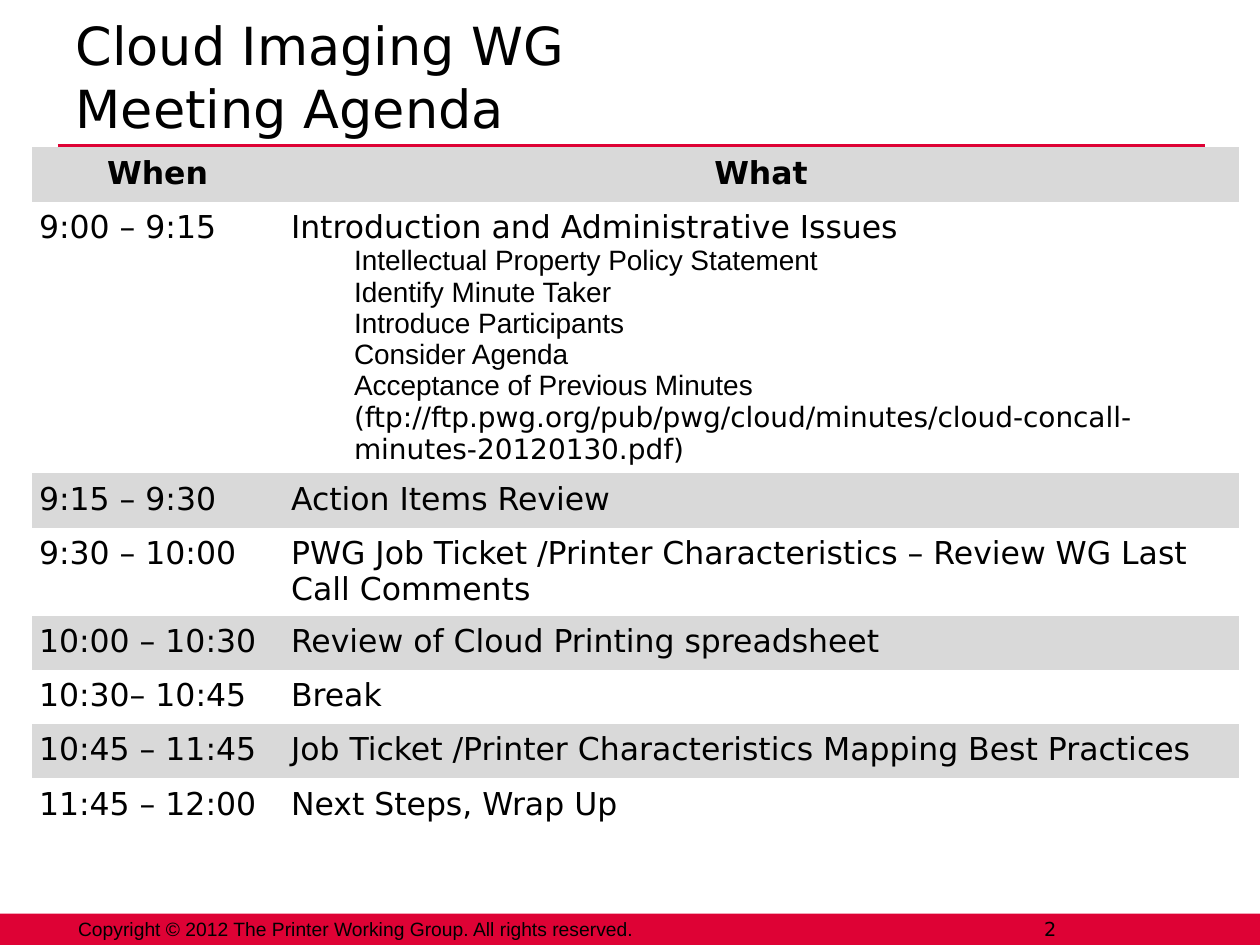
from lxml import etree
from pptx import Presentation
from pptx.dml.color import RGBColor
from pptx.enum.shapes import MSO_CONNECTOR as Conn, MSO_SHAPE as Shape
from pptx.enum.text import MSO_ANCHOR as Anchor, MSO_AUTO_SIZE as Fit, PP_ALIGN as Align
from pptx.oxml.ns import qn
from pptx.util import Inches, Pt

HUES = {"red": "DE0235", "grey": "D9D9D9", "ink": "000000"}
SANS, ARIAL = "DejaVu Sans", "Arial"
PLAIN = "{2D5ABB26-0587-4C30-8999-92F81FD0307C}"
TITLE = ["Cloud Imaging WG", "Meeting Agenda"]
NOTICE = "Copyright © 2012 The Printer Working Group. All rights reserved."
HEAD = ("When", "What")
AGENDA = [
    ("9:00 – 9:15", "Introduction and Administrative Issues"),
    ("9:15 – 9:30", "Action Items Review"),
    ("9:30 – 10:00", "PWG Job Ticket /Printer Characteristics – Review WG Last Call Comments"),
    ("10:00 – 10:30", "Review of Cloud Printing spreadsheet"),
    ("10:30– 10:45", "Break"),
    ("10:45 – 11:45", "Job Ticket /Printer Characteristics Mapping Best Practices"),
    ("11:45 – 12:00", "Next Steps, Wrap Up"),
]
TOPICS = [
    ("Intellectual Property Policy Statement", ARIAL),
    ("Identify Minute Taker", ARIAL),
    ("Introduce Participants", ARIAL),
    ("Consider Agenda", ARIAL),
    ("Acceptance of Previous Minutes", ARIAL),
    ("(ftp://ftp.pwg.org/pub/pwg/cloud/minutes/cloud-concall-minutes-20120130.pdf)", SANS),
]


def hue(name):
    return RGBColor.from_string(HUES[name])


def add_run(para, text, size, face=SANS, bold=False):
    run = para.add_run()
    run.text = text
    font = run.font
    font.size, font.name, font.bold = Pt(size), face, bold
    font.color.rgb = hue("ink")


def indent(para, left):
    props = para._p.get_or_add_pPr()
    props.set("marL", str(Inches(left)))
    props.set("indent", "0")


def set_frame(frame, pads, anchor, wrap=True):
    frame.margin_left, frame.margin_top, frame.margin_right, frame.margin_bottom = map(Inches, pads)
    frame.vertical_anchor = anchor
    frame.word_wrap = wrap
    frame.auto_size = Fit.NONE


def add_title(slide, left, top, width, height):
    title = slide.shapes.title
    title.left, title.top, title.width, title.height = map(Inches, (left, top, width, height))
    set_frame(title.text_frame, (0.06, 0.06, 0.1, 0.06), Anchor.BOTTOM)
    para = title.text_frame.paragraphs[0]
    para.alignment = Align.LEFT
    indent(para, 0.04)
    for i, line in enumerate(TITLE):
        if i:
            para.add_line_break()
        add_run(para, line, 30)


def add_rule(slide, left, top, width):
    rule = slide.shapes.add_connector(
        Conn.STRAIGHT, Inches(left), Inches(top), Inches(left + width), Inches(top))
    rule.line.color.rgb = hue("red")
    rule.line.width = Pt(3)
    etree.SubElement(rule._element.spPr, qn("a:effectLst"))


def add_footer(slide, left, top, width, height):
    bar = slide.shapes.add_shape(
        Shape.RECTANGLE, Inches(left), Inches(top), Inches(width), Inches(height))
    bar.shadow.inherit = False
    bar.fill.solid()
    bar.fill.fore_color.rgb = hue("red")
    bar.line.fill.background()

    def add_text(x, wide):
        box = slide.shapes.add_textbox(
            Inches(left + x), Inches(top - 0.02), Inches(wide), Inches(0.28))
        return box.text_frame

    note = add_text(0.58, 4.93)
    set_frame(note, (0, 0, 0.04, 0), Anchor.MIDDLE)
    indent(note.paragraphs[0], 0.04)
    add_run(note.paragraphs[0], NOTICE, 11, ARIAL)

    page = add_text(8.19, 0.29)
    set_frame(page, (0.1, 0.05, 0.1, 0.05), Anchor.MIDDLE, False)
    page.paragraphs[0].alignment = Align.CENTER
    add_run(page.paragraphs[0], "2", 11)


def add_agenda(slide, left, top, width, row_high):
    rows = [HEAD] + AGENDA
    frame = slide.shapes.add_table(
        len(rows), 2, Inches(left), Inches(top), Inches(width), Inches(row_high * len(rows)))
    table = frame.table
    table.first_row = table.horz_banding = False
    table._tbl.tblPr.find(qn("a:tableStyleId")).text = PLAIN
    table.columns[0].width = Inches(2)
    table.columns[1].width = Inches(width - 2)
    for r, texts in enumerate(rows):
        table.rows[r].height = Inches(row_high)
        for c, text in enumerate(texts):
            cell = table.cell(r, c)
            cell.margin_left = cell.margin_right = Inches(0.06)
            cell.margin_top = cell.margin_bottom = Inches(0.06)
            if r % 2:
                cell.fill.background()
            else:
                cell.fill.solid()
                cell.fill.fore_color.rgb = hue("grey")
            para = cell.text_frame.paragraphs[0]
            para.alignment = Align.LEFT if r else Align.CENTER
            add_run(para, text, 18, bold=r == 0)
    for text, face in TOPICS:
        para = table.cell(1, 1).text_frame.add_paragraph()
        para.level = 1
        indent(para, 0.5)
        add_run(para, text, 16, face)


def main():
    deck = Presentation()
    deck.slide_width, deck.slide_height = Inches(10), Inches(7.5)
    slide = deck.slides.add_slide(deck.slide_layouts[5])
    add_footer(slide, 0, 7.25, 10, 0.25)
    add_rule(slide, 0.46, 1.16, 9.1)
    add_title(slide, 0.5, 0.05, 7.25, 1.11)
    add_agenda(slide, 0.25, 1.17, 9.58, 0.43)
    deck.save("out.pptx")


if __name__ == "__main__":
    main()
